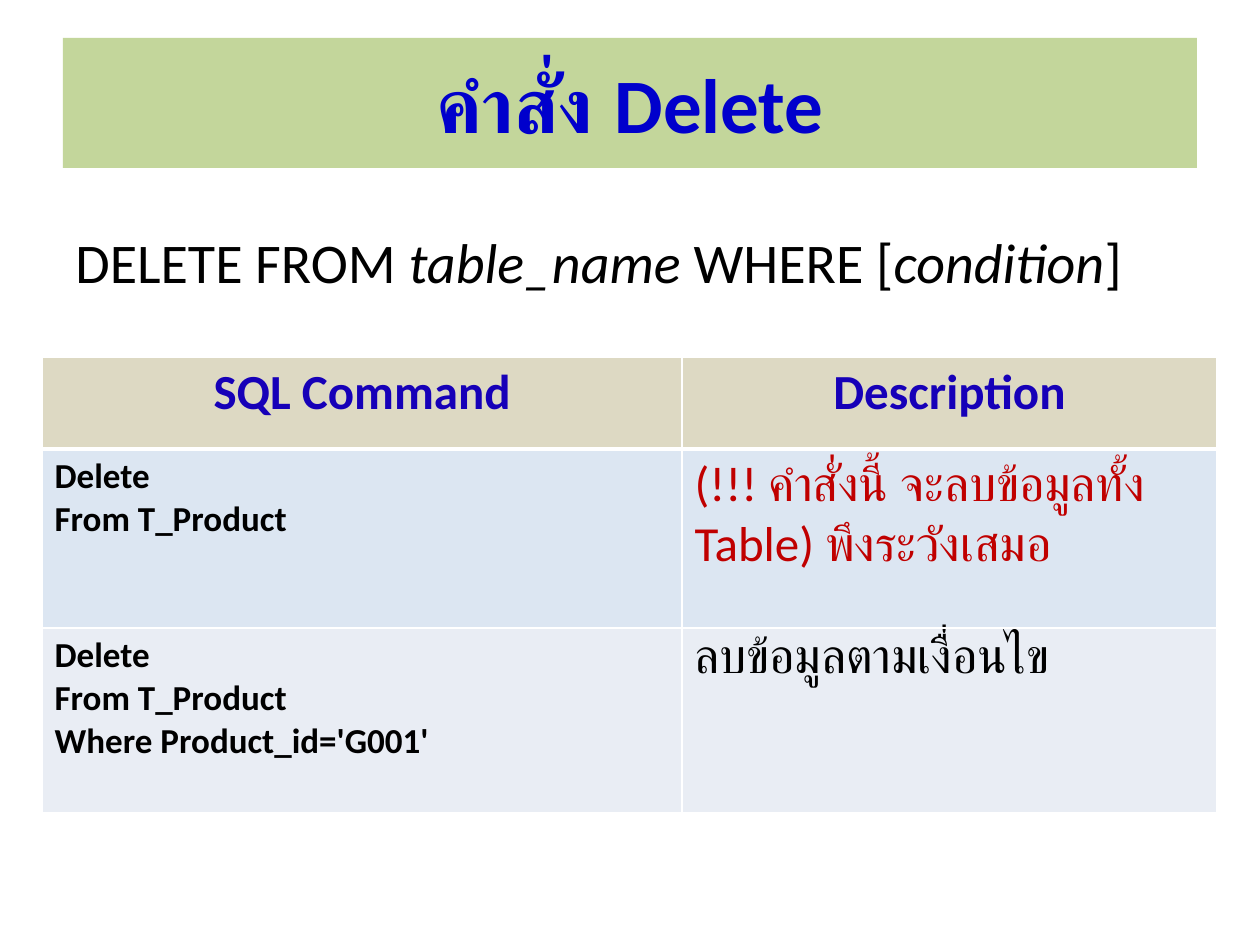
from lxml.etree import SubElement
from pptx import Presentation
from pptx.dml.color import RGBColor
from pptx.enum.shapes import MSO_SHAPE as Shape
from pptx.enum.text import MSO_ANCHOR as Anchor, PP_ALIGN as Align
from pptx.oxml.ns import qn
from pptx.util import Emu, Pt

PX_PER_INCH = 126
FONT = "Calibri"
BLACK, WHITE = "000000", "FFFFFF"


def px(n):
    return Emu(round(n * 914400 / PX_PER_INCH))


def color(hex_code):
    return RGBColor.from_string(hex_code)


def write(paragraph, text, size=20, hue=BLACK, bold=False, italic=False, align=Align.LEFT):
    paragraph.alignment = align
    run = paragraph.add_run()
    run.text = text
    font = run.font
    font.name, font.size = FONT, Pt(size)
    font.bold, font.italic = bold, italic
    font.color.rgb = color(hue)


def draw_title(slide, left, top, width, height):
    banner = slide.shapes.add_shape(Shape.RECTANGLE, px(left), px(top), px(width), px(height))
    banner.shadow.inherit = False
    banner.fill.solid()
    banner.fill.fore_color.rgb = color("C3D69B")
    banner.line.fill.background()
    banner.text_frame.vertical_anchor = Anchor.MIDDLE
    write(banner.text_frame.paragraphs[0], "คำสั่ง Delete",
          size=44, hue="0000CC", bold=True, align=Align.CENTER)


def draw_syntax(slide, left, top, width, height):
    syntax = slide.shapes.add_textbox(px(left), px(top), px(width), px(height)).text_frame
    syntax.word_wrap = True
    line = syntax.paragraphs[0]
    line.space_before = Pt(2)
    parts = ["DELETE FROM ", "table_name ", "WHERE [", "condition", "]"]
    for i, part in enumerate(parts):
        write(line, part, size=32, italic=i % 2 == 1)


def set_borders(cell, **widths):
    """Border widths in points, by side; the lines go before the cell's fill."""
    props = cell._tc.get_or_add_tcPr()
    for i, side in enumerate(("lnL", "lnR", "lnT", "lnB")):
        border = SubElement(props, qn(f"a:{side}"), w=str(Pt(widths.get(side, 1))))
        fill = SubElement(border, qn("a:solidFill"))
        SubElement(fill, qn("a:srgbClr"), val=WHITE)
        props.insert(i, border)


def draw_commands(slide, left, top, col_widths, row_heights):
    heading = dict(size=28, hue="1600B8", bold=True, align=Align.CENTER)
    command = dict(bold=True)
    rows = [
        ("DDD9C3", [(["SQL Command"], heading), (["Description"], heading)]),
        ("DCE6F2", [(["Delete", "From T_Product"], command),
                    (["(!!! คำสั่งนี้ จะลบข้อมูลทั้ง Table) พึงระวังเสมอ"],
                     dict(size=28, hue="C00000"))]),
        ("E9EDF4", [(["Delete", "From T_Product", "Where Product_id='G001'"], command),
                    (["ลบข้อมูลตามเงื่อนไข"], dict(size=28))]),
    ]
    table = slide.shapes.add_table(len(rows), len(col_widths), px(left), px(top),
                                   px(sum(col_widths)), px(sum(row_heights))).table
    for column, width in zip(table.columns, col_widths):
        column.width = px(width)
    for r, (fill, cells) in enumerate(rows):
        table.rows[r].height = px(row_heights[r])
        for c, (lines, style) in enumerate(cells):
            cell = table.cell(r, c)
            cell.fill.solid()
            cell.fill.fore_color.rgb = color(fill)
            # A thicker rule separates the heading row
            set_borders(cell, lnT=3 if r == 1 else 1, lnB=3 if r == 0 else 1)
            for i, line in enumerate(lines):
                frame = cell.text_frame
                write(frame.add_paragraph() if i else frame.paragraphs[0], line, **style)


def main():
    deck = Presentation()
    deck.slide_width, deck.slide_height = px(1260), px(945)
    slide = deck.slides.add_slide(deck.slide_layouts[6])
    draw_syntax(slide, 63, 221, 1134, 294)
    draw_title(slide, 63, 38, 1134, 130)
    draw_commands(slide, 42, 357, col_widths=[640, 535], row_heights=[92, 179, 185])
    deck.save("out.pptx")


if __name__ == "__main__":
    main()
